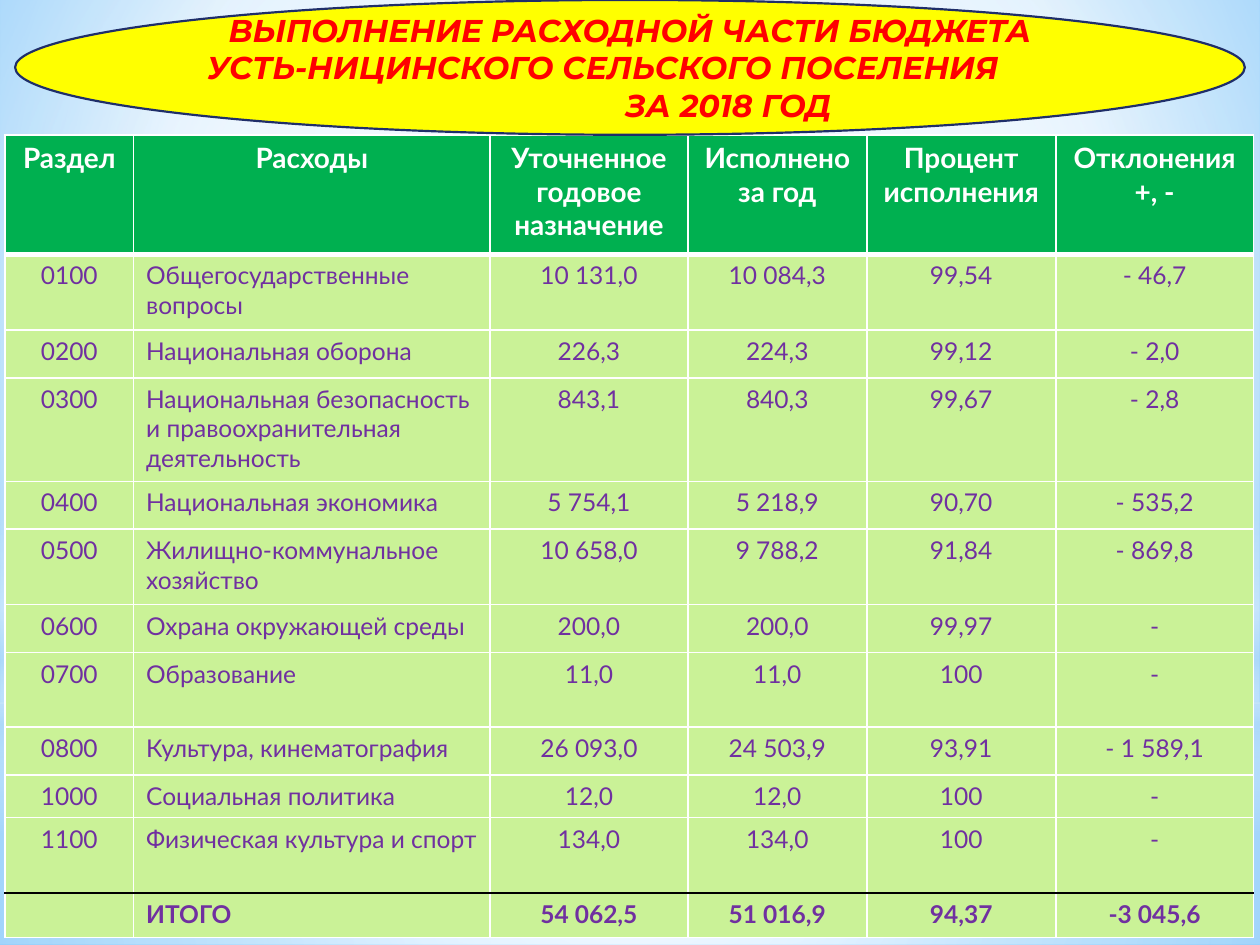
import pptx
import pptx.util
import pptx.dml.color
import pptx.enum.shapes
import pptx.enum.text
import pptx.oxml
import pptx.oxml.ns

Inch, Pt = pptx.util.Inches, pptx.util.Pt
Shape = pptx.enum.shapes.MSO_SHAPE
Align = pptx.enum.text.PP_ALIGN
WIDE, HIGH = 10, 7.5
FACE, HEAD_FACE = "Lato", "Montserrat"
WHITE, BLACK, PALE = "FFFFFF", "000000", "B4DCFA"
GREEN, LIME, PURPLE = "00B050", "CAF297", "7030A0"
MID = (50, 50, 50, 50)

# Backdrop layers: shape, top and height in inches, stops, focus of the circle
LAYERS = [
    (Shape.RECTANGLE, 5.58, 1.92,
     [(0, WHITE, 91), (37, WHITE, 76), (100, PALE, 79)], MID),
    (Shape.RECTANGLE, 0, 5.58,
     [(0, WHITE, 89), (48, WHITE, 62), (100, PALE, 79)], MID),
    (Shape.RECTANGLE, 4.12, 2.5,
     [(0, WHITE, 0), (29, WHITE, 30), (45, PALE, 40),
      (55, WHITE, 26), (65, PALE, 60), (100, WHITE, 0)], None),
    (Shape.OVAL, 1.75, 5.58, [(0, WHITE, 100), (56, WHITE, 0)], MID),
]

# Title lines with left and right margins in inches
TITLE = [
    ("ВЫПОЛНЕНИЕ РАСХОДНОЙ ЧАСТИ БЮДЖЕТА", 0, 0),
    ("УСТЬ-НИЦИНСКОГО СЕЛЬСКОГО ПОСЕЛЕНИЯ", 0, 0.43),
    ("ЗА 2018 ГОД", 1.56, 0),
]

COLS = [1.02, 2.83, 1.57, 1.42, 1.5, 1.57]
ROWS = [0.95, 0.6, 0.38, 0.82, 0.38, 0.6, 0.38, 0.59, 0.38, 0.34, 0.6, 0.35]
DATA = [
    ("Раздел", "Расходы", "Уточненное годовое назначение",
     "Исполнено за год", "Процент исполнения", "Отклонения +, -"),
    ("0100", "Общегосударственные вопросы",
     "10 131,0", "10 084,3", "99,54", "- 46,7"),
    ("0200", "Национальная оборона", "226,3", "224,3", "99,12", "- 2,0"),
    ("0300", "Национальная безопасность и правоохранительная деятельность",
     "843,1", "840,3", "99,67", "- 2,8"),
    ("0400", "Национальная экономика",
     "5 754,1", "5 218,9", "90,70", "- 535,2"),
    ("0500", "Жилищно-коммунальное хозяйство",
     "10 658,0", "9 788,2", "91,84", "- 869,8"),
    ("0600", "Охрана окружающей среды", "200,0", "200,0", "99,97", "-"),
    ("0700", "Образование", "11,0", "11,0", "100", "-"),
    ("0800", "Культура, кинематография",
     "26 093,0", "24 503,9", "93,91", "- 1 589,1"),
    ("1000", "Социальная политика", "12,0", "12,0", "100", "-"),
    ("1100", "Физическая культура и спорт", "134,0", "134,0", "100", "-"),
    ("", "ИТОГО", "54 062,5", "51 016,9", "94,37", "-3 045,6"),
]


def color(code):
    return pptx.dml.color.RGBColor.from_string(code)


def style(para, face, size, code, bold=False, slant=False):
    font = para.font
    font.name, font.size = face, Pt(size)
    font.bold, font.italic = bold, slant
    font.color.rgb = color(code)


def blend(fill, stops, focus):
    """Swap a solid fill element for a gradient; no focus means top to bottom."""
    marks = "".join(
        f'<a:gs pos="{pos * 1000}"><a:srgbClr val="{code}">'
        f'<a:alpha val="{alpha * 1000}"/></a:srgbClr></a:gs>'
        for pos, code, alpha in stops)
    way = '<a:lin ang="5400000" scaled="0"/>'
    if focus:
        sides = " ".join(f'{side}="{part * 1000}"'
                         for side, part in zip("ltrb", focus))
        way = f'<a:path path="circle"><a:fillToRect {sides}/></a:path>'
    space = pptx.oxml.ns.nsdecls("a")
    grad = pptx.oxml.parse_xml(
        f'<a:gradFill {space} rotWithShape="1">'
        f'<a:gsLst>{marks}</a:gsLst>{way}</a:gradFill>')
    fill.getparent().replace(fill, grad)


def backdrop(slide):
    slide.background.fill.solid()
    base = slide.element.find(".//" + pptx.oxml.ns.qn("p:bgPr"))
    blend(base[0], [(0, "9ED5FF", 100), (60, WHITE, 100), (100, "5BB9FF", 100)],
          (20, 10, 20, 60))
    for kind, top, high, stops, focus in LAYERS:
        part = slide.shapes.add_shape(
            kind, 0, Inch(top), Inch(WIDE), Inch(high))
        part.shadow.inherit = False
        part.line.fill.background()
        part.fill.solid()
        fill = part.element.spPr.find(pptx.oxml.ns.qn("a:solidFill"))
        blend(fill, stops, focus)


def banner(slide, left, top, wide, high):
    oval = slide.shapes.add_shape(
        Shape.OVAL, Inch(left), Inch(top), Inch(wide), Inch(high))
    oval.shadow.inherit = False
    oval.fill.solid()
    oval.fill.fore_color.rgb = color("FFFF00")
    oval.line.color.rgb = color("1F2E69")
    oval.line.width = Pt(1.25)
    frame = oval.text_frame
    frame.word_wrap = True
    frame.vertical_anchor = pptx.enum.text.MSO_ANCHOR.MIDDLE
    frame.margin_left = frame.margin_right = 0
    for num, (text, before, after) in enumerate(TITLE):
        para = frame.add_paragraph() if num else frame.paragraphs[0]
        para.text = text
        para.alignment = Align.CENTER
        style(para, HEAD_FACE, 18, "FF0000", True, True)
        props = para._p.get_or_add_pPr()
        props.set("marL", str(Inch(before)))
        props.set("marR", str(Inch(after)))


def border(cell, side, code, width):
    space = pptx.oxml.ns.nsdecls("a")
    cell._tc.get_or_add_tcPr().append(pptx.oxml.parse_xml(
        f'<a:ln{side} {space} w="{Pt(width)}"><a:solidFill>'
        f'<a:srgbClr val="{code}"/></a:solidFill></a:ln{side}>'))


def budget(slide, left, top):
    grid = slide.shapes.add_table(
        len(ROWS), len(COLS), Inch(left), Inch(top),
        Inch(sum(COLS)), Inch(sum(ROWS))).table
    for col, wide in zip(grid.columns, COLS):
        col.width = Inch(wide)
    last = len(ROWS) - 1
    for r, (high, texts) in enumerate(zip(ROWS, DATA)):
        grid.rows[r].height = Inch(high)
        head = r == 0
        # White rules, heavy below the header, black above the total
        rules = {side: (WHITE, 1) for side in "LRTB"}
        if r < 2:
            rules["TB"[1 - r]] = (WHITE, 3)
        if r >= last - 1:
            rules["T" if r == last else "B"] = (BLACK, 1)
        for c, text in enumerate(texts):
            cell = grid.cell(r, c)
            for side, (code, width) in rules.items():
                border(cell, side, code, width)
            cell.fill.solid()
            cell.fill.fore_color.rgb = color(GREEN if head else LIME)
            para = cell.text_frame.paragraphs[0]
            para.text = text
            para.alignment = Align.LEFT if c == 1 and not head else Align.CENTER
            style(para, FACE, 16 if head else 14, WHITE if head else PURPLE,
                  head or r == last)


def main():
    deck = pptx.Presentation()
    deck.slide_width, deck.slide_height = Inch(WIDE), Inch(HIGH)
    slide = deck.slides.add_slide(deck.slide_layouts[6])
    backdrop(slide)
    budget(slide, 0.04, 1.07)
    banner(slide, 0.12, 0, 9.76, 1.07)
    deck.save("out.pptx")


if __name__ == "__main__":
    main()
